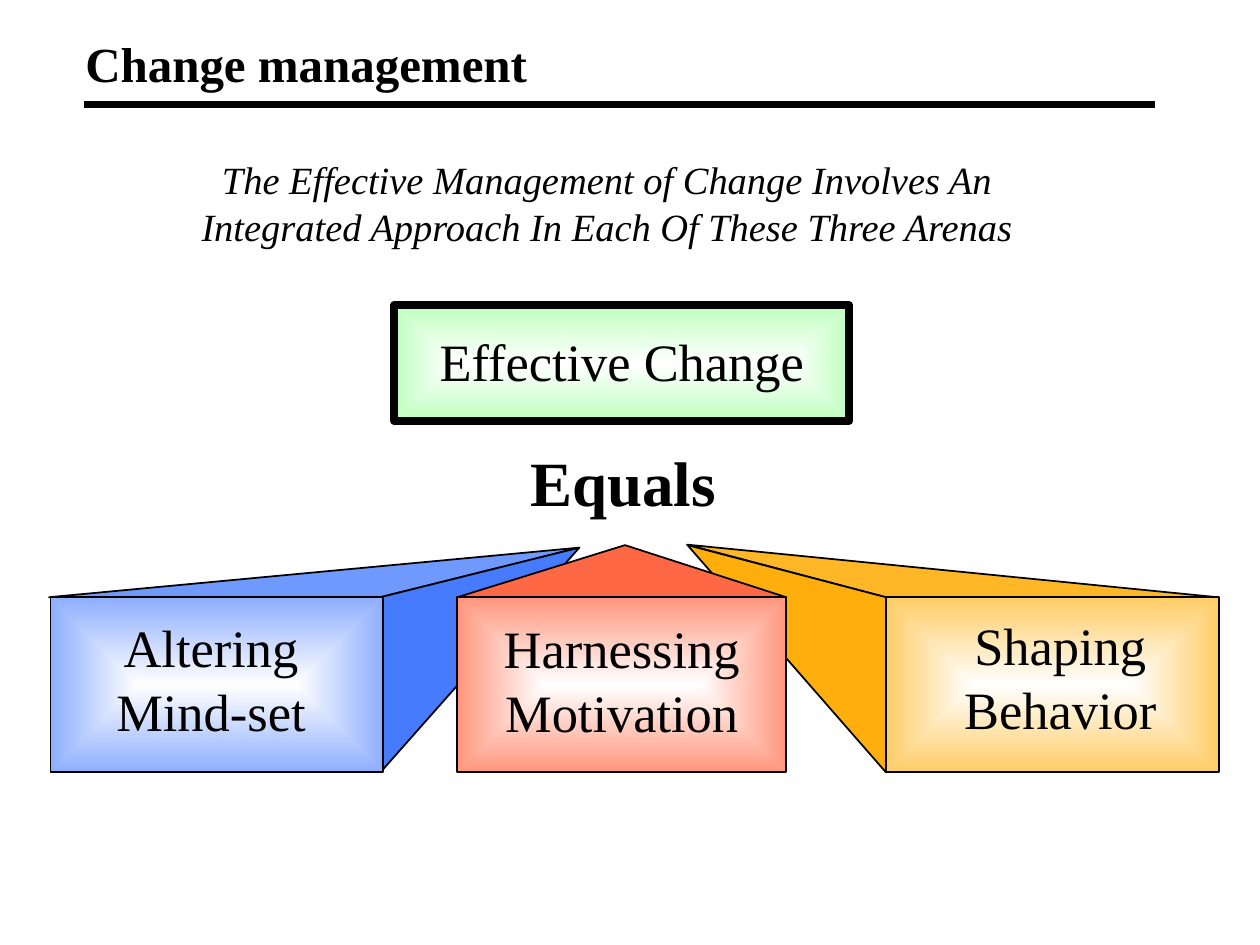
from lxml import etree
from pptx import Presentation
from pptx import util as u
from pptx.dml import color
from pptx.enum import shapes, text
from pptx.oxml import ns


def tint(code):
    return color.RGBColor.from_string(code)


class Deck:
    font = "Times New Roman"
    ink = "000000"

    def __init__(self):
        self.file = Presentation()
        self.file.slide_width = u.Cm(25.4)
        self.file.slide_height = u.Cm(19.05)
        self.slide = self.file.slides.add_slide(self.file.slide_layouts[6])
        self.items = self.slide.shapes

    def edge(self, line, width):
        line.color.rgb = tint(self.ink)
        line.width = u.Pt(width)

    def rule(self, left, top, right):
        line = self.items.add_connector(
            shapes.MSO_CONNECTOR.STRAIGHT, u.Cm(left), u.Cm(top), u.Cm(right), u.Cm(top))
        self.edge(line.line, 3.75)
        etree.SubElement(line._element.spPr, ns.qn("a:effectLst"))

    def box(self, left, top, width, height, rim, line=1):
        rect = self.items.add_shape(
            shapes.MSO_SHAPE.RECTANGLE, u.Cm(left), u.Cm(top), u.Cm(width), u.Cm(height))
        rect.shadow.inherit = False
        rect.fill.gradient()
        for stop, code in zip(rect.fill.gradient_stops, ("FFFFFF", rim)):
            stop.color.rgb = tint(code)
        grad = rect._element.spPr.find(ns.qn("a:gradFill"))
        grad.remove(grad.find(ns.qn("a:lin")))
        glow = etree.SubElement(grad, ns.qn("a:path"), path="shape")
        etree.SubElement(glow, ns.qn("a:fillToRect"), l="50000", t="50000", r="50000", b="50000")
        self.edge(rect.line, line)

    def facet(self, fill, *dots):
        first, *rest = [(u.Cm(x), u.Cm(y)) for x, y in dots]
        pen = self.items.build_freeform(*first)
        pen.add_line_segments(rest, close=True)
        form = pen.convert_to_shape()
        form.shadow.inherit = False
        form.fill.solid()
        form.fill.fore_color.rgb = tint(fill)
        self.edge(form.line, 1)

    def label(self, left, top, width, height, paras, size, align=text.PP_ALIGN.CENTER,
              bold=False, slant=False, space=None, wrap=True, mid=False):
        frame = self.items.add_textbox(
            u.Cm(left), u.Cm(top), u.Cm(width), u.Cm(height)).text_frame
        frame.word_wrap = wrap
        if mid:
            frame.vertical_anchor = text.MSO_ANCHOR.MIDDLE
        for n, lines in enumerate(paras):
            para = frame.add_paragraph() if n else frame.paragraphs[0]
            para.alignment = align
            if space:
                para.line_spacing = space
            if n:
                para.space_before = u.Pt(7.5)
            for k, words in enumerate(lines):
                if k:
                    para.add_line_break()
                run = para.add_run()
                run.text = words
                font = run.font
                font.name, font.size = self.font, u.Pt(size)
                font.bold, font.italic = bold, slant
                font.color.rgb = tint(self.ink)

    def save(self):
        self.file.save("out.pptx")


def main():
    deck = Deck()
    deck.rule(1.7, 2.11, 23.29)
    deck.label(1.47, 0.64, 21.8, 1.27, [["Change management"]], 28,
               align=text.PP_ALIGN.LEFT, bold=True, mid=True)

    top, tall = 12.04, 3.53
    base = top + tall

    deck.facet("FFB727", (17.86, top), (24.54, top), (13.85, 10.98))
    deck.facet("FFAE0B", (17.86, top), (17.86, base), (13.86, 10.99))
    deck.box(17.86, top, 6.71, tall, "FFCC66")
    deck.box(7.95, 6.15, 9.17, 2.34, "BFFFBF", 4.5)
    deck.facet("7099FE", (7.67, top), (0.99, top), (11.68, 11.04))
    deck.facet("467BFE", (7.67, top), (7.67, base), (11.68, 11.04))
    deck.box(1.02, top, 6.71, tall, "8EAEFE")
    deck.facet("FF6845", (9.22, top), (12.6, 10.99), (15.85, top))
    deck.box(9.22, top, 6.63, tall, "FF967D")

    deck.label(8.31, 6.5, 8.46, 1.88, [["Effective Change"]], 30)
    deck.label(10.24, 8.82, 4.65, 1.88, [["Equals"]], 36, bold=True)
    for left, high, words in (
        (0.84, 12.52, ("Altering", "Mind-set")),
        (9.12, 12.54, ("Harnessing", "Motivation")),
        (17.96, 12.48, ("Shaping", "Behavior")),
    ):
        deck.label(left, high, 6.83, 2.79, [[word] for word in words], 30, space=0.8)

    deck.label(3.74, 3.03, 16.99, 2.11,
               [["The Effective Management of Change Involves An",
                 "Integrated Approach In Each Of These Three Arenas"]],
               22, slant=True, wrap=False)
    deck.save()


if __name__ == "__main__":
    main()
